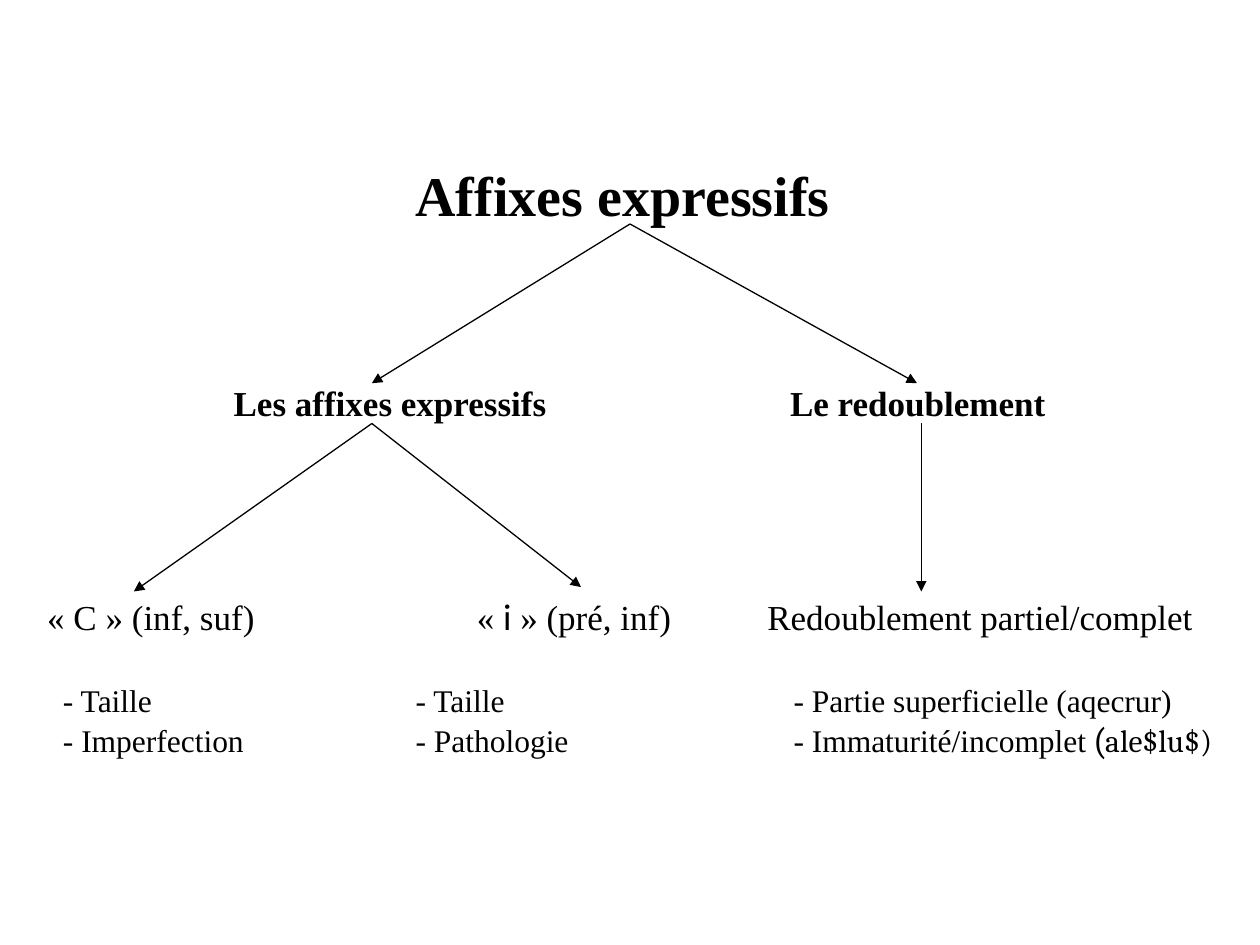
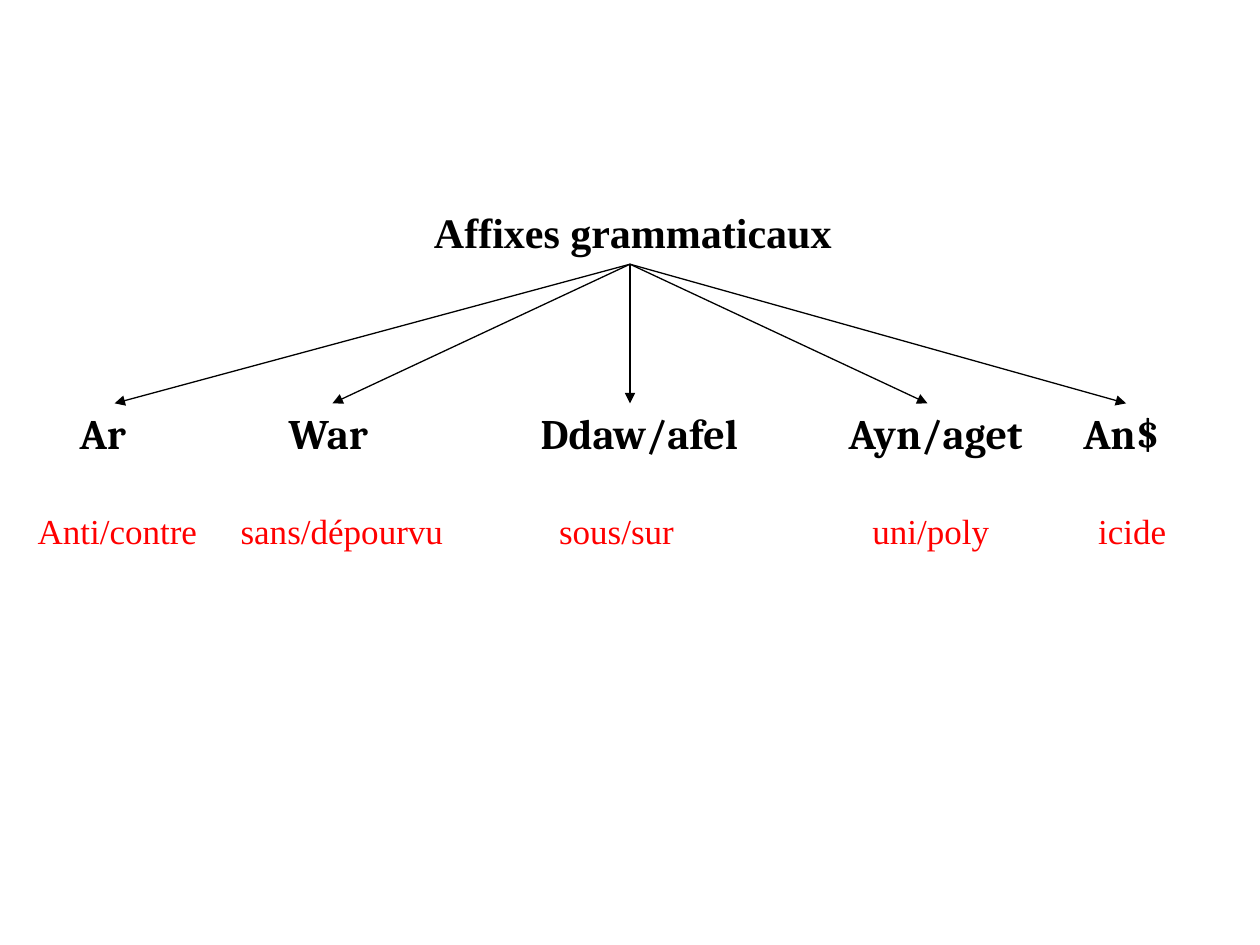
from lxml import etree
from pptx import Presentation
from pptx.dml.color import RGBColor
from pptx.enum.shapes import MSO_CONNECTOR
from pptx.enum.text import MSO_ANCHOR, PP_ALIGN
from pptx.oxml.ns import qn
from pptx.util import Pt

STRAIGHT = MSO_CONNECTOR.STRAIGHT
MIDDLE = MSO_ANCHOR.MIDDLE
LEFT = PP_ALIGN.LEFT

SLIDE_W, SLIDE_H = 720, 540
COLORS = {"text": "000000", "gloss": "FF0000", "line": "000000"}
SERIF, AFFIX_FONT = "Times New Roman", "Cambria"


def add_label(s, x, mid, paragraphs, size, width=260, bold=False,
              color="text", font=SERIF, spacing=None):
    """Text centred vertically on mid; a paragraph is a string or (text, font) runs."""
    height = len(paragraphs) * (spacing or size * 1.3)
    width = min(width, SLIDE_W - x)
    sp = s.shapes.add_textbox(Pt(x), Pt(mid - height / 2), Pt(width), Pt(height))
    tf = sp.text_frame
    tf.word_wrap = True
    tf.vertical_anchor = MIDDLE
    tf.margin_left = tf.margin_right = tf.margin_top = tf.margin_bottom = 0
    for i, runs in enumerate(paragraphs):
        p = tf.add_paragraph() if i else tf.paragraphs[0]
        p.alignment = LEFT
        if spacing:
            p.line_spacing = Pt(spacing)
        for text, face in [(runs, font)] if isinstance(runs, str) else runs:
            r = p.add_run()
            r.text = text
            r.font.name = face
            r.font.size = Pt(size)
            r.font.bold = bold
            r.font.color.rgb = RGBColor.from_string(COLORS[color])


def add_arrows(s, start, ends):
    """Arrows fanning out from one node to each of its children."""
    for end in ends:
        sp = s.shapes.add_connector(STRAIGHT, *map(Pt, (*start, *end)))
        sp.line.width = Pt(0.75)
        sp.line.color.rgb = RGBColor.from_string(COLORS["line"])
        ln = sp.line._get_or_add_ln()
        etree.SubElement(ln, qn("a:tailEnd"), type="triangle")
        etree.SubElement(sp._element.spPr, qn("a:effectLst"))


def add_slide(prs):
    return prs.slides.add_slide(prs.slide_layouts[6])


def build_expressive(prs):
    s = add_slide(prs)

    # Root and its two branches
    add_label(s, 237.5, 111, ["Affixes expressifs"], 32, bold=True)
    for x, branch in [(133.5, "Les affixes expressifs"), (451.5, "Le redoublement")]:
        add_label(s, x, 230, [branch], 20, bold=True)

    # Forms
    forms = [
        (27, "«\u00a0C\u00a0» (inf, suf)"),
        (272.5, [("«\u00a0", SERIF), ("i", "Lato"), ("\u00a0» (pré, inf)", SERIF)]),
        (438.5, "Redoublement partiel/complet"),
    ]
    for x, form in forms:
        add_label(s, x, 352, [form], 20)

    # Meanings
    meanings = [
        (36, ["- Taille", "- Imperfection"]),
        (237.5, ["- Taille", "- Pathologie"]),
        (453.5, ["- Partie superficielle (aqecrur)",
                 [("- Immaturité/incomplet ", SERIF), ("(", "Roboto"),
                  ("ale$lu$)", AFFIX_FONT)]]),
    ]
    for x, lines in meanings:
        add_label(s, x, 411, lines, 18, spacing=22.4)

    # Tree
    add_arrows(s, (360, 128), [(212.5, 219), (524, 219)])
    add_arrows(s, (212.5, 242), [(76.5, 338), (332, 335.5)])
    add_arrows(s, (526.5, 242), [(526.5, 338)])


def build_grammatical(prs):
    s = add_slide(prs)
    add_label(s, 248, 132.5, ["Affixes grammaticaux"], 24, bold=True)

    # Each column: affix, its gloss, and the arrow tip above them
    columns = [
        (45.5, "Ar", 21.5, "Anti/contre", 65.5),
        (165, "War", 137.5, "sans/dépourvu", 190),
        (309, "Ddaw/afel", 319.5, "sous/sur", 360),
        (485, "Ayn/aget", 498.5, "uni/poly", 530),
        (619, "An$", 627.5, "icide", 643.5),
    ]
    for affix_x, affix, gloss_x, gloss, _ in columns:
        add_label(s, affix_x, 247, [affix], 24, 130, bold=True, font=AFFIX_FONT)
        add_label(s, gloss_x, 303, [gloss], 20, 130, color="gloss")
    add_arrows(s, (360, 151), [(tip, 230.5) for *_, tip in columns])


def main():
    prs = Presentation()
    prs.slide_width, prs.slide_height = Pt(SLIDE_W), Pt(SLIDE_H)
    build_expressive(prs)
    build_grammatical(prs)
    prs.save("out.pptx")


if __name__ == "__main__":
    main()
